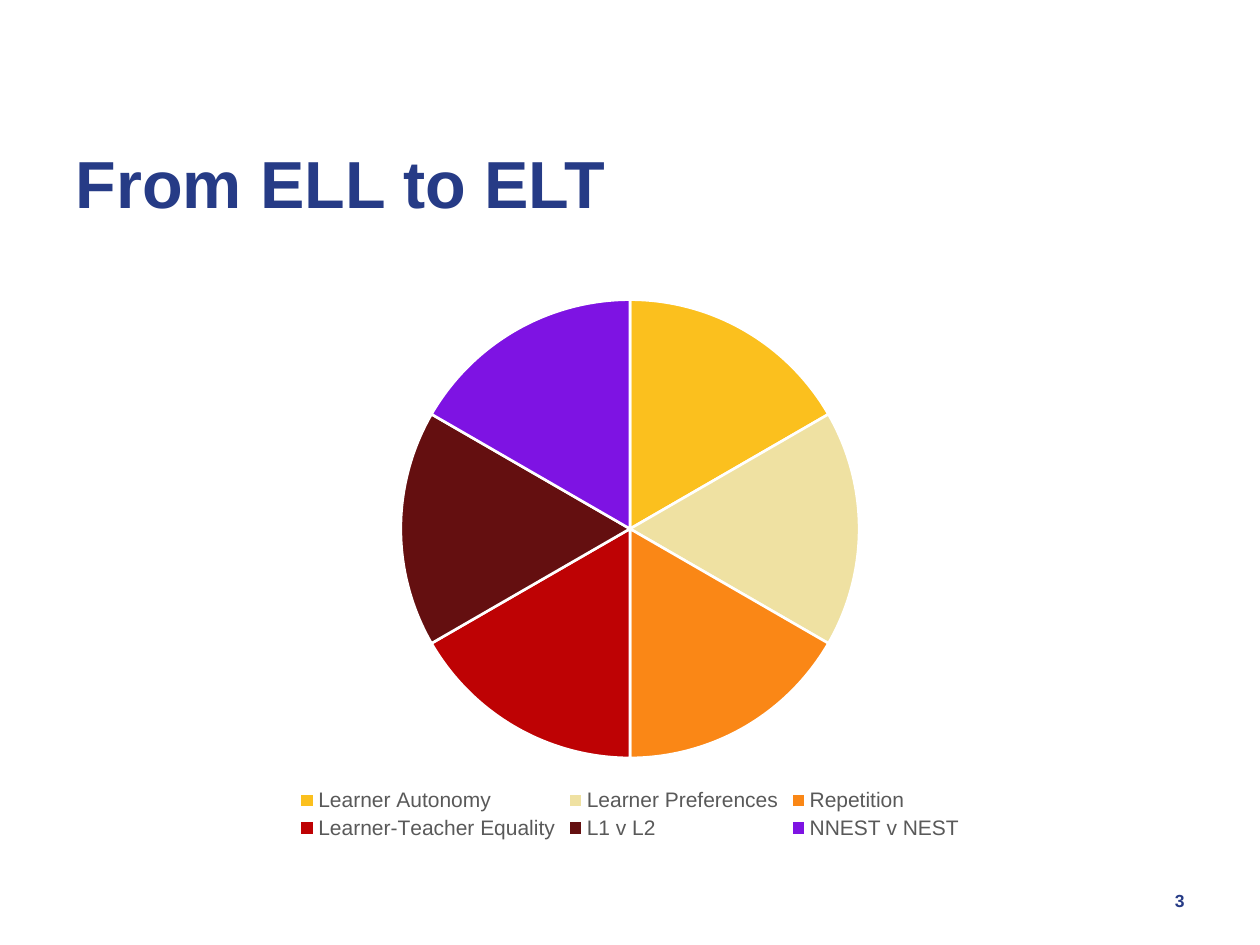
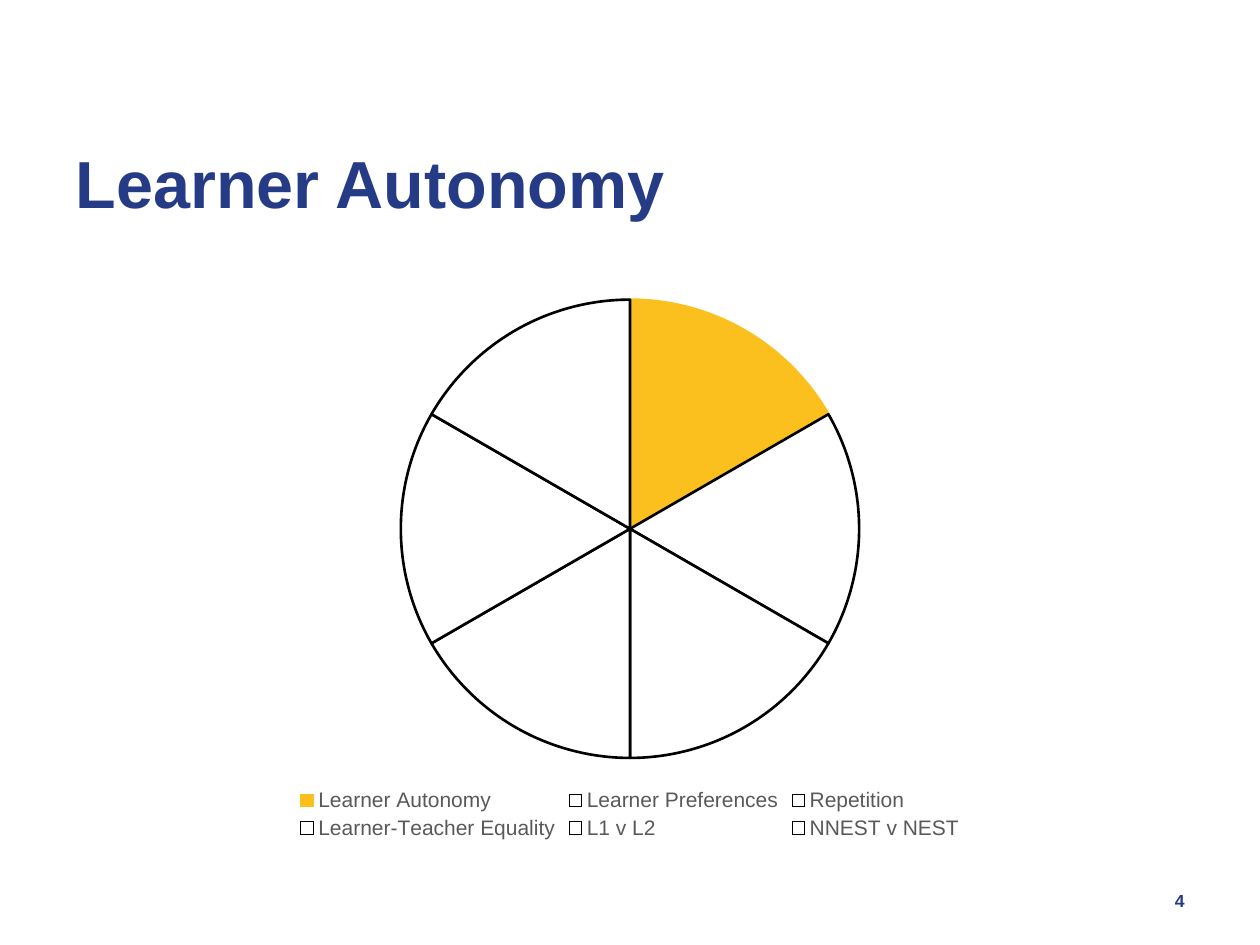
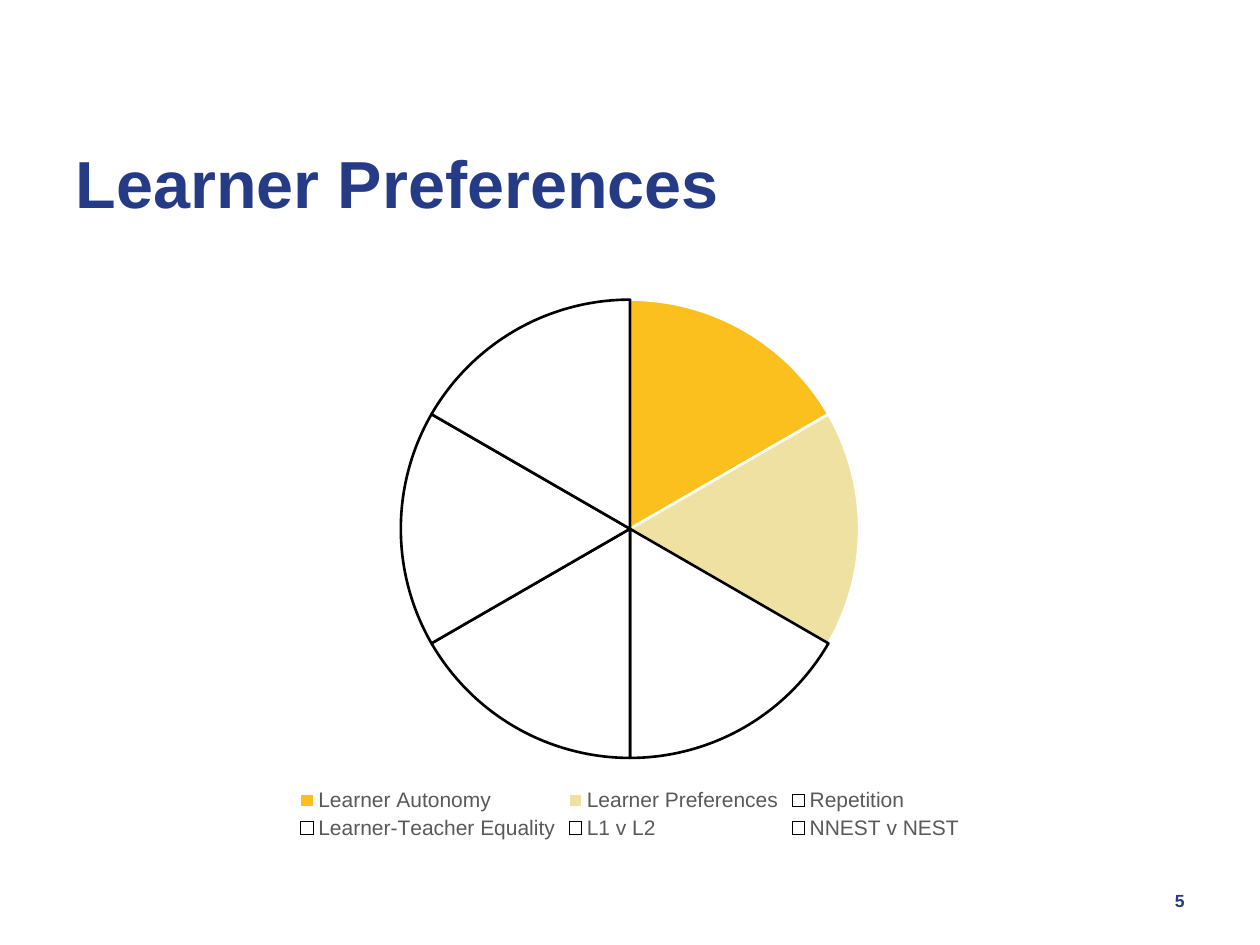
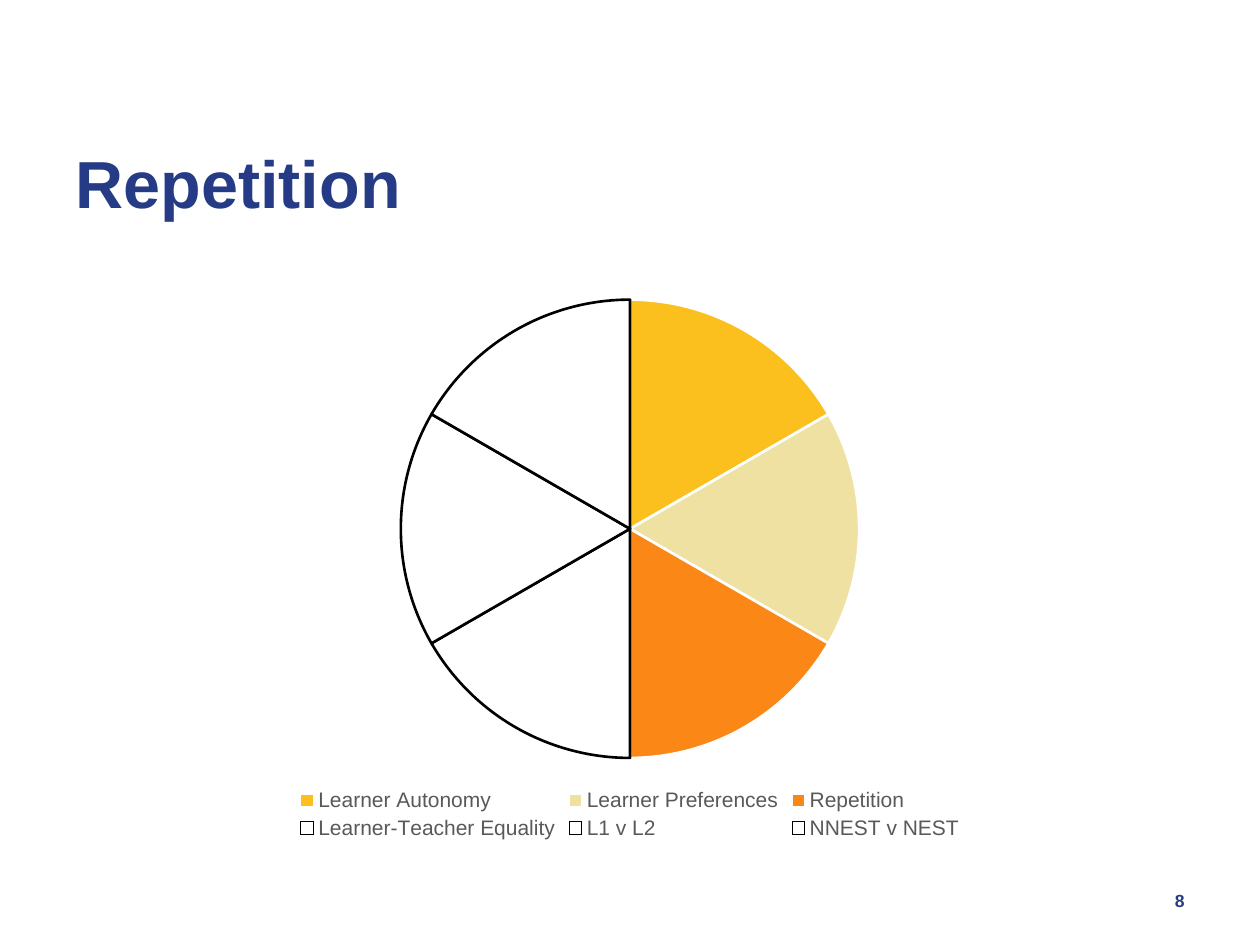
"""Builds four slides whose pie of teaching themes fills up slice by slice."""
from pptx import Presentation
from pptx.chart.data import CategoryChartData
from pptx.dml.color import RGBColor
from pptx.enum.chart import XL_CHART_TYPE, XL_LEGEND_POSITION
from pptx.enum.text import MSO_ANCHOR, MSO_AUTO_SIZE, PP_ALIGN
from pptx.util import Emu, Pt

FONT = "Arial"
NAVY, GRAY, BLACK, WHITE = "263B86", "595959", "000000", "FFFFFF"
THEMES = {
    "Learner Autonomy": "FBC01E",
    "Learner Preferences": "EFE1A2",
    "Repetition": "FA8716",
    "Learner-Teacher Equality": "BE0204",
    "L1 v L2": "640F10",
    "NNEST v NEST": "7E13E3",
}
SLIDES = [
    ("From ELL to ELT", 6, WHITE, "3"),
    ("Learner Autonomy", 1, THEMES["Learner Autonomy"], "4"),
    ("Learner Preferences", 2, WHITE, "5"),
    ("Repetition", 3, WHITE, "8"),
]


def px(length):
    return Emu(length * 9144)


def color(value):
    return RGBColor.from_string(value)


def style_font(font, size, value, bold=False):
    font.name = FONT
    font.size = Pt(size)
    font.bold = bold
    font.color.rgb = color(value)


class Deck:
    def __init__(self):
        self.presentation = Presentation()
        self.presentation.slide_width = px(1000)
        self.presentation.slide_height = px(750)
        self.slide = None

    def add_slide(self):
        layout = self.presentation.slide_layouts[5]
        self.slide = self.presentation.slides.add_slide(layout)

    def set_text(self, shape, text, size, anchor, alignment):
        frame = shape.text_frame
        frame.word_wrap = True
        frame.auto_size = MSO_AUTO_SIZE.NONE
        frame.vertical_anchor = anchor
        paragraph = frame.paragraphs[0]
        paragraph.text = text
        paragraph.alignment = alignment
        style_font(paragraph.font, size, NAVY, bold=True)
        return paragraph

    def title(self, text):
        shape = self.slide.shapes.title
        shape.left, shape.top = px(50), px(55)
        shape.width, shape.height = px(773), px(127)
        paragraph = self.set_text(shape, text, 38, MSO_ANCHOR.BOTTOM, PP_ALIGN.LEFT)
        paragraph.line_spacing = 0.9

    def pie(self, filled_count, filled_outline):
        data = CategoryChartData()
        data.categories = list(THEMES)
        data.add_series("Series 1", [17] * len(THEMES))
        chart = self.slide.shapes.add_chart(
            XL_CHART_TYPE.PIE, px(50), px(224), px(900), px(446), data
        ).chart
        chart.has_title = False
        style_font(chart.font, 10, BLACK)
        chart.has_legend = True
        chart.legend.position = XL_LEGEND_POSITION.BOTTOM
        chart.legend.include_in_layout = False
        style_font(chart.legend.font, 12, GRAY)
        plot = chart.plots[0]
        plot.vary_by_categories = True
        for index, theme_color in enumerate(THEMES.values()):
            filled = index < filled_count
            slice_format = plot.series[0].points[index].format
            slice_format.fill.solid()
            slice_format.fill.fore_color.rgb = color(theme_color if filled else WHITE)
            slice_format.line.width = Pt(1.5)
            slice_format.line.color.rgb = color(filled_outline if filled else BLACK)

    def page_number(self, text):
        shape = self.slide.shapes.add_textbox(px(717), px(695), px(233), px(40))
        self.set_text(shape, text, 10, MSO_ANCHOR.MIDDLE, PP_ALIGN.RIGHT)


def main():
    deck = Deck()
    for title, filled_count, filled_outline, number in SLIDES:
        deck.add_slide()
        deck.title(title)
        deck.pie(filled_count, filled_outline)
        deck.page_number(number)
    deck.presentation.save("out.pptx")


if __name__ == "__main__":
    main()
